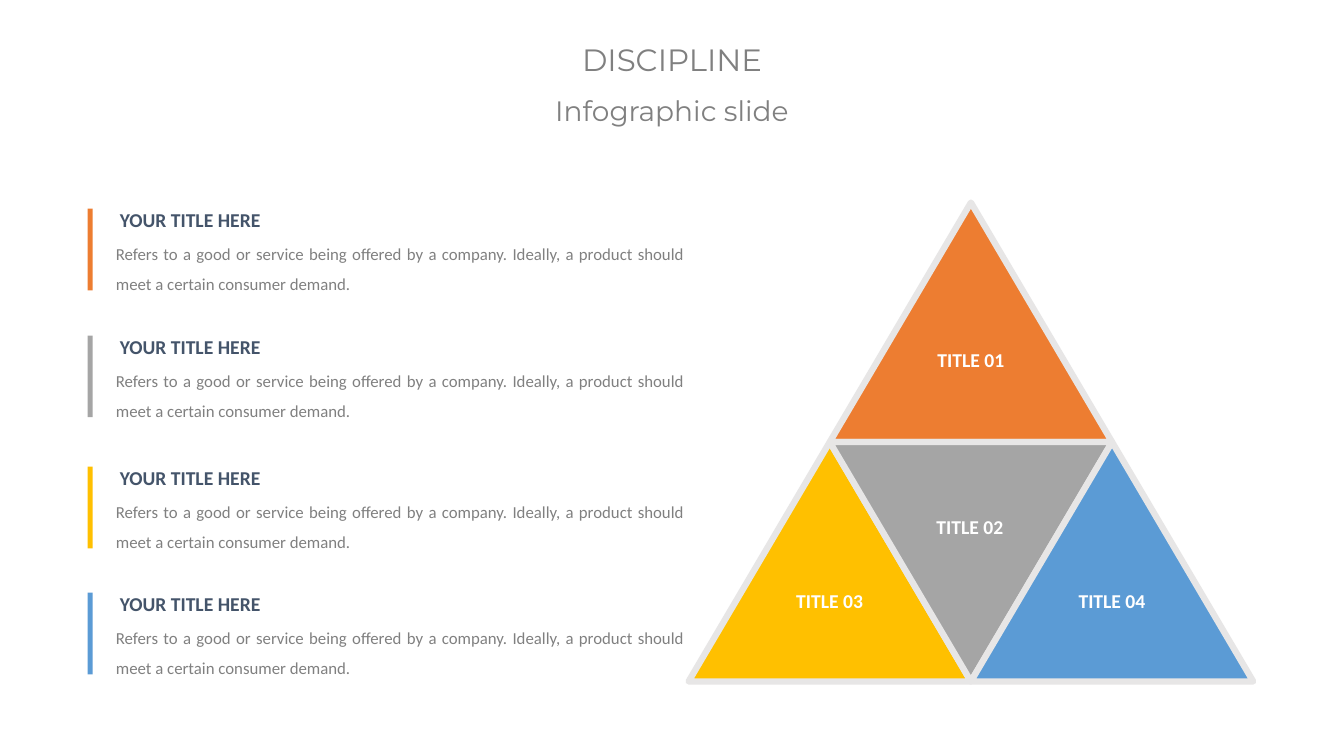
from dataclasses import dataclass

from lxml import etree
from pptx import Presentation
from pptx.dml.color import RGBColor
from pptx.enum.shapes import MSO_SHAPE
from pptx.enum.text import MSO_ANCHOR, MSO_AUTO_SIZE, PP_ALIGN
from pptx.oxml.ns import qn
from pptx.util import Inches, Pt

RECT = MSO_SHAPE.RECTANGLE
TOP, MIDDLE = MSO_ANCHOR.TOP, MSO_ANCHOR.MIDDLE
GROW = MSO_AUTO_SIZE.SHAPE_TO_FIT_TEXT
LEFT, CENTER, JUSTIFY = PP_ALIGN.LEFT, PP_ALIGN.CENTER, PP_ALIGN.JUSTIFY

ORANGE, GRAY, YELLOW, BLUE = "ED7D31", "A5A5A5", "FFC000", "5B9BD5"
WHITE, EDGE, NAVY, TEXT_GRAY = "FFFFFF", "E7E6E6", "44546A", "808080"
HEADING = "YOUR TITLE HERE"
BODY = ("Refers to a good or service being offered by a company. "
        "Ideally, a product should meet a certain consumer demand.")

APEX_X, APEX_Y = 9.63, 2.01
HALF, HEIGHT = 1.4, 2.375  # half the base and the height of one small triangle


@dataclass
class Triangle:
    label: str
    color: str
    corners: list[tuple[int, int]]  # (half bases from the apex, rows below it)
    label_x: float  # centre of the label
    label_y: float


@dataclass
class Item:
    color: str
    top: float


TRIANGLES = [
    Triangle("TITLE 01", ORANGE, [(-1, 1), (0, 0), (1, 1)], 9.63, 3.4),
    Triangle("TITLE 03", YELLOW, [(-2, 2), (-1, 1), (0, 2)], 8.23, 5.79),
    Triangle("TITLE 02", GRAY, [(1, 1), (0, 2), (-1, 1)], 9.62, 5.06),
    Triangle("TITLE 04", BLUE, [(0, 2), (1, 1), (2, 2)], 11.03, 5.79),
]
ITEMS = [Item(ORANGE, 2.01), Item(GRAY, 3.27), Item(YELLOW, 4.57), Item(BLUE, 5.82)]


def rgb(color: str) -> RGBColor:
    return RGBColor.from_string(color)


def add_text(s, text: str, x: float, y: float, w: float, h: float, size: int,
             color: str, font: str = "Calibri", bold: bool = False,
             align=CENTER, anchor=MIDDLE):
    """Add a one-paragraph text box and return its text frame."""
    tf = s.shapes.add_textbox(Inches(x), Inches(y), Inches(w), Inches(h)).text_frame
    tf.text = text
    tf.word_wrap = align != CENTER
    tf.auto_size = GROW
    tf.vertical_anchor = anchor
    p = tf.paragraphs[0]
    p.alignment = align
    r = p.runs[0]
    r.font.name = font
    r.font.size = Pt(size)
    r.font.bold = bold
    r.font.color.rgb = rgb(color)
    return tf


def add_triangle(s, tri: Triangle) -> None:
    points = [(Inches(APEX_X + col * HALF), Inches(APEX_Y + row * HEIGHT))
              for col, row in tri.corners]
    builder = s.shapes.build_freeform(*points[0])
    builder.add_line_segments(points[1:], close=True)
    sp = builder.convert_to_shape()
    sp.shadow.inherit = False
    sp.fill.solid()
    sp.fill.fore_color.rgb = rgb(tri.color)
    sp.line.color.rgb = rgb(EDGE)
    sp.line.width = Pt(4.5)
    etree.SubElement(sp.line._get_or_add_ln(), qn("a:round"))


def add_item(s, item: Item) -> None:
    """Add a coloured bar with a heading and a description beside it."""
    add_text(s, HEADING, 1.09, item.top, 2.07, 0.34, 14, NAVY, bold=True, align=LEFT)
    tf = add_text(s, BODY, 1.03, item.top + 0.245, 5.88, 0.69, 12, TEXT_GRAY,
                  align=JUSTIFY, anchor=TOP)
    tf.margin_left = tf.margin_right = Inches(0.12)
    tf.margin_top = tf.margin_bottom = Inches(0.06)
    p = tf.paragraphs[0]
    p.line_spacing = 1.5
    p.space_before = Pt(2.4)
    bar = s.shapes.add_shape(RECT, Inches(0.87), Inches(item.top + 0.06),
                             Inches(0.05), Inches(0.81))
    bar.shadow.inherit = False
    bar.fill.solid()
    bar.fill.fore_color.rgb = rgb(item.color)
    bar.line.fill.background()


def main() -> None:
    prs = Presentation()
    prs.slide_width, prs.slide_height = Inches(13.33), Inches(7.5)
    s = prs.slides.add_slide(prs.slide_layouts[6])
    for tri in TRIANGLES:
        add_triangle(s, tri)
    for tri in TRIANGLES:
        add_text(s, tri.label, tri.label_x - 0.53, tri.label_y, 1.06, 0.34, 14,
                 WHITE, bold=True)
    for item in ITEMS:
        add_item(s, item)
    add_text(s, "Infographic slide", 5.39, 0.87, 2.55, 0.44, 20, TEXT_GRAY, "Montserrat")
    add_text(s, "DISCIPLINE", 5.66, 0.35, 2.01, 0.47, 22, TEXT_GRAY, "Montserrat")
    prs.save("out.pptx")


if __name__ == "__main__":
    main()
